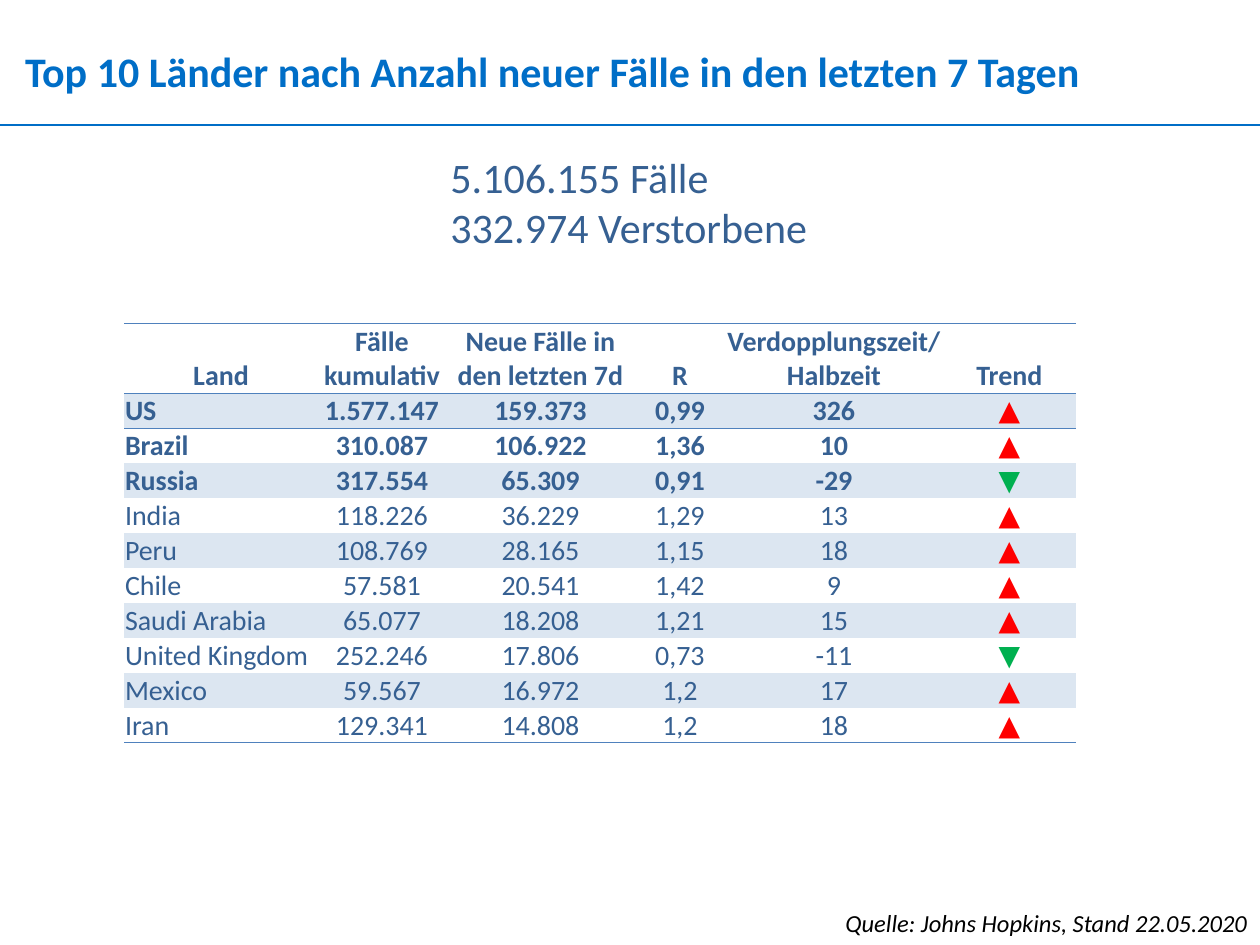
from typing import NamedTuple

from lxml.etree import SubElement
from pptx import Presentation
from pptx.dml.color import RGBColor
from pptx.enum.shapes import MSO_CONNECTOR
from pptx.enum.text import MSO_ANCHOR, MSO_AUTO_SIZE, PP_ALIGN
from pptx.oxml.ns import qn
from pptx.util import Emu, Pt

EMU_PER_PX = 914400 / 126
ACCENT, NAVY, BAND, RULE = "006EC7", "366092", "DCE6F1", "4F81BD"
RED, GREEN, BLACK = "FF0000", "00B050", "000000"
NO_STYLE = "{2D5ABB26-0587-4C30-8999-92F81FD0307C}"
BOLD_ROWS = 4  # header and the top three countries


class Box(NamedTuple):
    left: int
    top: int
    width: int
    height: int


class Country(NamedTuple):
    name: str
    total: str
    new_cases: str
    r_value: str
    doubling: str
    trend: str


HEADER = Country("Land", "Fälle kumulativ", "Neue Fälle in den letzten 7d", "R",
                 "Verdopplungszeit/Halbzeit", "Trend")
COUNTRIES = [
    Country("US", "1.577.147", "159.373", "0,99", "326", "▲"),
    Country("Brazil", "310.087", "106.922", "1,36", "10", "▲"),
    Country("Russia", "317.554", "65.309", "0,91", "-29", "▼"),
    Country("India", "118.226", "36.229", "1,29", "13", "▲"),
    Country("Peru", "108.769", "28.165", "1,15", "18", "▲"),
    Country("Chile", "57.581", "20.541", "1,42", "9", "▲"),
    Country("Saudi Arabia", "65.077", "18.208", "1,21", "15", "▲"),
    Country("United Kingdom", "252.246", "17.806", "0,73", "-11", "▼"),
    Country("Mexico", "59.567", "16.972", "1,2", "17", "▲"),
    Country("Iran", "129.341", "14.808", "1,2", "18", "▲"),
]
COLUMN_WIDTHS = [194, 128, 189, 90, 218, 133]
HEADER_HEIGHT, ROW_HEIGHT = 70, 35


def px(length: int) -> Emu:
    return Emu(round(length * EMU_PER_PX))


def rgb(color: str) -> RGBColor:
    return RGBColor.from_string(color)


def set_attributes(target, values: dict) -> None:
    for name, value in values.items():
        setattr(target, name, value)


def write(frame, lines: list[str], size: int, color: str,
          align=PP_ALIGN.LEFT, **font_format) -> None:
    frame.text = "\n".join(lines)
    for paragraph in frame.paragraphs:
        paragraph.alignment = align
        set_attributes(paragraph.font, {"name": "Calibri", "size": Pt(size), **font_format})
        paragraph.font.color.rgb = rgb(color)


def place(shape, box: Box) -> None:
    set_attributes(shape, {side: px(value) for side, value in box._asdict().items()})


def add_text(slide, box: Box, lines: list[str], size: int, color: str,
             wrap: bool = True, **text_format) -> None:
    frame = slide.shapes.add_textbox(*map(px, box)).text_frame
    set_attributes(frame, {"word_wrap": wrap, "auto_size": MSO_AUTO_SIZE.SHAPE_TO_FIT_TEXT})
    write(frame, lines, size, color, **text_format)


def add_border(cell, edge: str) -> None:
    line = SubElement(cell._tc.get_or_add_tcPr(), qn(f"a:{edge}"), w=str(Pt(0.5)))
    fill = SubElement(line, qn("a:solidFill"))
    SubElement(fill, qn("a:srgbClr"), val=RULE)


def fill_cell(cell, text: str, row: int, column: int) -> None:
    is_trend = row > 0 and column == len(COLUMN_WIDTHS) - 1
    set_attributes(cell, {
        "margin_left": px(1), "margin_right": px(1), "margin_top": px(1), "margin_bottom": 0,
        "vertical_anchor": MSO_ANCHOR.MIDDLE if is_trend else MSO_ANCHOR.BOTTOM,
    })
    write(cell.text_frame, [text], 16, {"▲": RED, "▼": GREEN}.get(text, NAVY),
          PP_ALIGN.LEFT if row and column == 0 else PP_ALIGN.CENTER, bold=row < BOLD_ROWS)
    # Rules enclose the header and close the table
    if row in (0, 1):
        add_border(cell, "lnT")
    if row in (0, len(COUNTRIES)):
        add_border(cell, "lnB")
    if row % 2:
        cell.fill.solid()
        cell.fill.fore_color.rgb = rgb(BAND)
    else:
        cell.fill.background()


def add_country_table(slide, left: int, top: int) -> None:
    records = [HEADER, *COUNTRIES]
    heights = [HEADER_HEIGHT] + [ROW_HEIGHT] * len(COUNTRIES)
    box = Box(left, top, sum(COLUMN_WIDTHS), sum(heights))
    graphic = slide.shapes.add_table(len(records), len(COLUMN_WIDTHS), *map(px, box))
    for style in graphic.element.iter(qn("a:tableStyleId")):
        style.text = NO_STYLE
    table = graphic.table
    set_attributes(table, {"first_row": True, "horz_banding": False})
    for column, width in zip(table.columns, COLUMN_WIDTHS):
        column.width = px(width)
    for row, (record, height) in enumerate(zip(records, heights)):
        table.rows[row].height = px(height)
        for column, text in enumerate(record):
            fill_cell(table.cell(row, column), text, row, column)


def main() -> None:
    presentation = Presentation()
    set_attributes(presentation, {"slide_width": px(1260), "slide_height": px(945)})
    slide = presentation.slides.add_slide(presentation.slide_layouts[5])

    # Heading and the line below it
    heading = slide.shapes.title
    place(heading, Box(25, 45, 1213, 51))
    set_attributes(heading.text_frame, {
        "margin_left": 0, "margin_right": 0, "margin_top": 0, "margin_bottom": 0,
        "word_wrap": True, "vertical_anchor": MSO_ANCHOR.TOP,
        "auto_size": MSO_AUTO_SIZE.SHAPE_TO_FIT_TEXT,
    })
    write(heading.text_frame, ["Top 10 Länder nach Anzahl neuer Fälle in den letzten 7 Tagen"],
          24, ACCENT, bold=True)
    divider = slide.shapes.add_connector(MSO_CONNECTOR.STRAIGHT, *map(px, (0, 125, 1260, 125)))
    divider.line.color.rgb = rgb(ACCENT)
    divider.line.width = Pt(1.5)
    SubElement(divider.element.spPr, qn("a:effectLst"))

    # Worldwide totals
    add_text(slide, Box(438, 145, 386, 115), ["5.106.155 Fälle", "332.974 Verstorbene"],
             24, NAVY, wrap=False)

    # Countries with the most new cases
    add_country_table(slide, 124, 323)

    # Source
    add_text(slide, Box(814, 902, 446, 43), ["Quelle: Johns Hopkins, Stand 22.05.2020"],
             14, BLACK, align=PP_ALIGN.RIGHT, italic=True)

    presentation.save("out.pptx")


if __name__ == "__main__":
    main()
